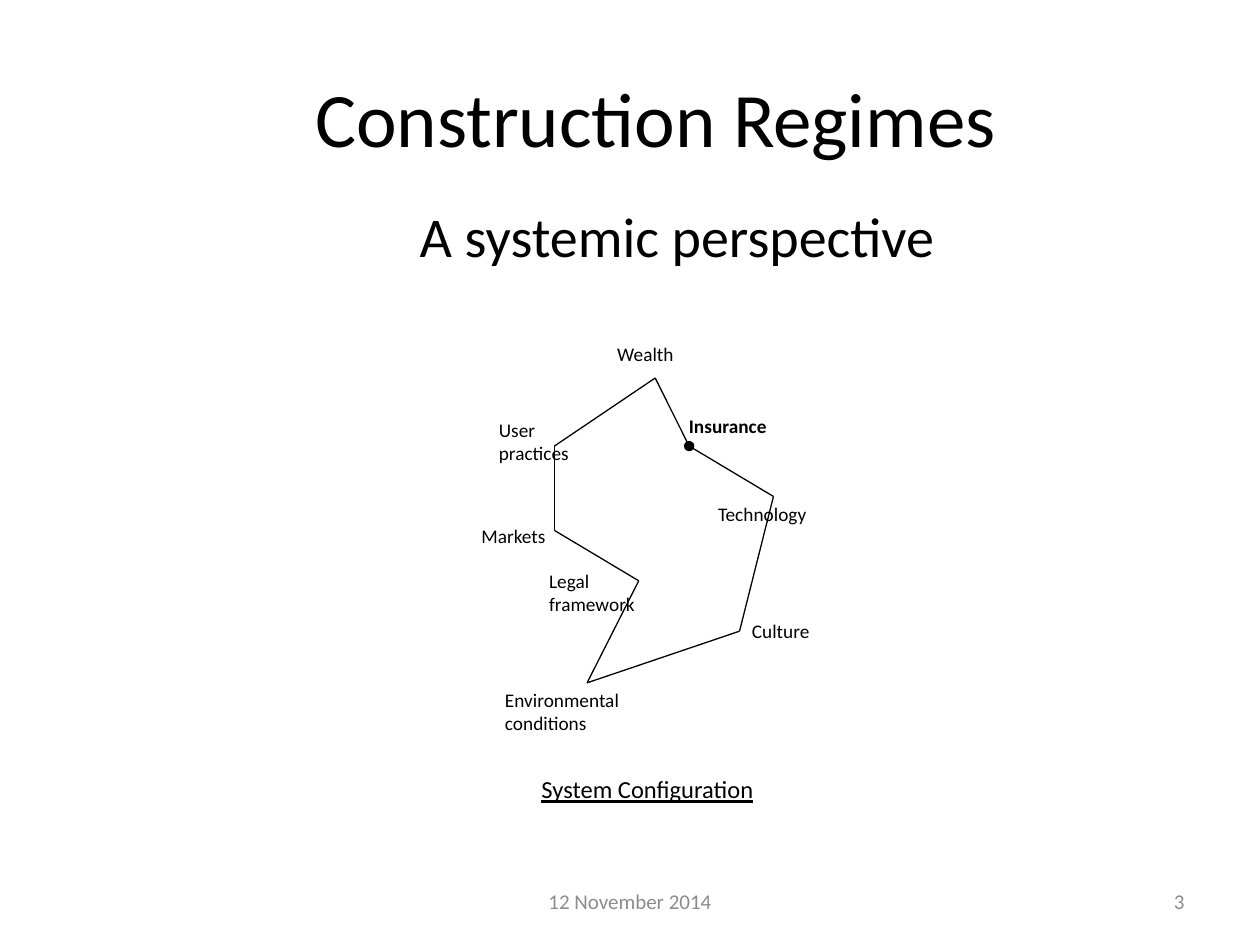
from lxml.etree import SubElement as Sub
from pptx import Presentation
from pptx.dml.color import RGBColor as RGB
from pptx.enum.shapes import MSO_CONNECTOR as Conn
from pptx.enum.text import MSO_ANCHOR as Anchor, PP_ALIGN as Align
from pptx.oxml.ns import qn
from pptx.util import Pt

BLACK = RGB(0, 0, 0)
GREY = RGB(0x8C, 0x8C, 0x8C)
FONT = "Calibri"

RING = [(106.4, 24), (125.8, 62.9), (174, 91.7), (154.6, 168.7),
        (67.5, 198.2), (97, 139.9), (48.8, 111.1), (48.8, 62.9)]
NODE = 1

LABELS = [
    ("Wealth", 77.6, 0, 68, 46),
    ("Insurance", 118.6, 41.3, 77, 29),
    ("Technology", 135.2, 91.7, 87, 29),
    ("Culture", 154.6, 158.6, 58, 29),
    ("Environmental conditions", 13.5, 197.5, 100, 48),
    ("Legal framework", 38.7, 129.8, 77, 48),
    ("Markets", 0, 104, 68, 36),
    ("User\npractices", 10, 43.4, 96, 48),
]


def style(frame, size, color=BLACK, align=Align.LEFT, bold=False, line=False):
    for para in frame.paragraphs:
        para.alignment = align
        for run in para.runs:
            font = run.font
            font.name, font.size = FONT, Pt(size)
            font.bold, font.underline = bold, line
            font.color.rgb = color


def place(shape, box):
    shape.left, shape.top, shape.width, shape.height = map(Pt, box)


def add_text(slide, text, box, size, **look):
    frame = slide.shapes.add_textbox(*map(Pt, box)).text_frame
    frame.word_wrap = True
    frame.text = text
    style(frame, size, **look)
    return frame


def add_line(slide, start, end, dot):
    line = slide.shapes.add_connector(Conn.STRAIGHT, *map(Pt, start + end))
    line.line.color.rgb = BLACK
    line.line.width = Pt(0.75)
    if dot:
        Sub(line.line._get_or_add_ln(), qn("a:tailEnd"), type="oval")
    Sub(line._element.spPr, qn("a:effectLst"))


def add_title(slide, box):
    title = slide.shapes.title
    place(title, box)
    frame = title.text_frame
    frame.text = "Construction Regimes"
    frame.vertical_anchor = Anchor.MIDDLE
    style(frame, 44, align=Align.CENTER)


def add_body(slide, box):
    body = slide.placeholders[1]
    place(body, box)
    frame = body.text_frame
    frame.text = "A systemic perspective"
    para = frame.paragraphs[0]
    props = para._p.get_or_add_pPr()
    props.set("marL", str(Pt(27)))
    props.set("indent", str(Pt(-27)))
    para.space_before = Pt(0)
    Sub(props, qn("a:buNone"))
    style(frame, 32, align=Align.CENTER)


def add_system(slide, left, top):
    dots = [(left + x, top + y) for x, y in RING]
    for i, start in enumerate(dots):
        end = (i + 1) % len(dots)
        add_line(slide, start, dots[end], end == NODE)
    for i, (text, x, y, width, height) in enumerate(LABELS):
        add_text(slide, text, (left + x, top + y, width, height), 11,
                 bold=i == NODE)
    add_text(slide, "System Configuration", (left + 10, top + 247, 184, 29),
             14, align=Align.CENTER, line=True)


def add_footer(slide, top, height):
    parts = [("12 November 2014", 246, 228, Align.CENTER),
             ("3", 516, 168, Align.RIGHT)]
    for text, left, width, align in parts:
        frame = add_text(slide, text, (left, top, width, height), 12,
                         color=GREY, align=align)
        frame.vertical_anchor = Anchor.MIDDLE


def main():
    deck = Presentation()
    deck.slide_width, deck.slide_height = Pt(720), Pt(540)
    slide = deck.slides.add_slide(deck.slide_layouts[1])
    add_title(slide, (65.5, 21.6, 618.5, 90))
    add_body(slide, (82.8, 111.6, 608.4, 356.4))
    add_system(slide, 268, 192)
    add_footer(slide, 500.5, 28.8)
    deck.save("out.pptx")


if __name__ == "__main__":
    main()
